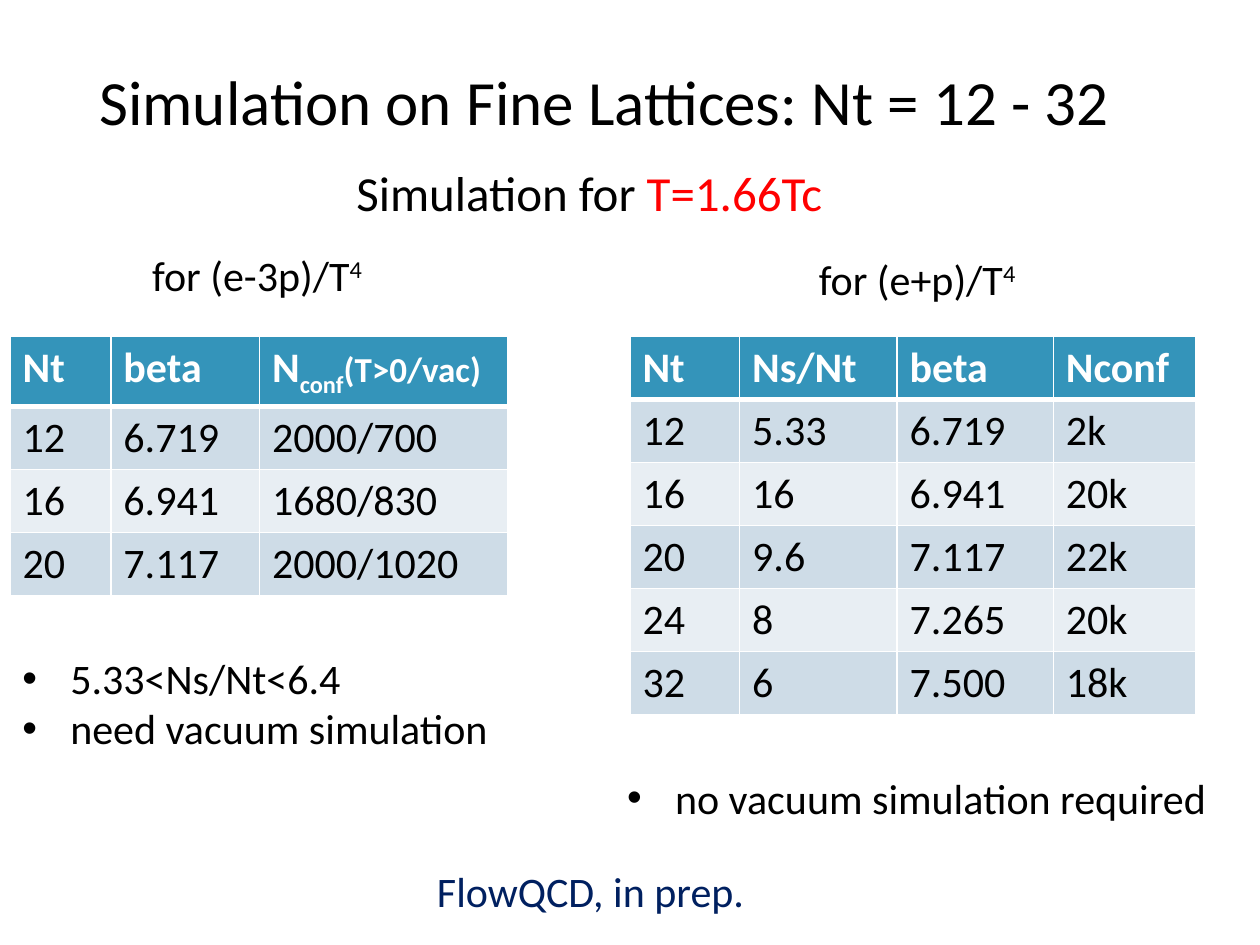
from dataclasses import dataclass

from lxml import etree
from pptx import Presentation, util as u
from pptx.dml.color import RGBColor
from pptx.enum import text
from pptx.oxml import ns

# Grid of 100 columns by 75 rows over a 10 x 7.5 inch slide
CELL = u.Inches(0.1)
COLUMNS, ROWS = 100, 75


@dataclass(frozen=True)
class Theme:
    font: str = "Calibri"
    ink: str = "000000"
    accent: str = "FF0000"
    credit: str = "002060"
    header: str = "3494BA"
    bands: tuple = ("CEDCE7", "E8EEF3")
    white: str = "FFFFFF"
    title: int = 36
    subtitle: int = 28
    body: int = 24
    small: int = 20


THEME = Theme()


def grid(*lengths):
    return [u.Emu(round(length * CELL)) for length in lengths]


def write(paragraph, parts, size=THEME.body, color=THEME.ink, bold=False):
    """Fill a paragraph with strings or (string, {size, color, base}) pairs."""
    for part in parts:
        words, style = (part, {}) if isinstance(part, str) else part
        run = paragraph.add_run()
        run.text = words
        run.font.name = THEME.font
        run.font.size = u.Pt(style.get("size", size))
        run.font.bold = bold
        run.font.color.rgb = RGBColor.from_string(style.get("color", color))
        if "base" in style:
            run.font._element.set("baseline", str(style["base"] * 1000))


def add_bullet(paragraph):
    indent = u.Inches(0.38)
    properties = paragraph._p.get_or_add_pPr()
    properties.set("marL", str(indent))
    properties.set("indent", str(-indent))
    etree.SubElement(properties, ns.qn("a:buFont"), typeface="Arial")
    etree.SubElement(properties, ns.qn("a:buChar"), char="•")


def add_label(slide, box, lines, bullets=False, **style):
    frame = slide.shapes.add_textbox(*grid(*box)).text_frame
    frame.word_wrap = False
    frame.auto_size = text.MSO_AUTO_SIZE.SHAPE_TO_FIT_TEXT
    for index, parts in enumerate(lines):
        paragraph = frame.add_paragraph() if index else frame.paragraphs[0]
        if bullets:
            add_bullet(paragraph)
        write(paragraph, parts, **style)


def add_title(slide, box, words):
    frame = slide.shapes.add_textbox(*grid(*box)).text_frame
    frame.word_wrap = True
    frame.vertical_anchor = text.MSO_ANCHOR.MIDDLE
    frame.paragraphs[0].line_spacing = 0.9
    write(frame.paragraphs[0], [words], size=THEME.title)


def set_borders(cell, bottom):
    """Borders come before the fill in the cell's properties."""
    properties = cell._tc.get_or_add_tcPr()
    widths = {"a:lnL": 1, "a:lnR": 1, "a:lnT": 1, "a:lnB": bottom}
    for position, (side, width) in enumerate(widths.items()):
        line = etree.Element(ns.qn(side), w=str(u.Pt(width)))
        fill = etree.SubElement(line, ns.qn("a:solidFill"))
        etree.SubElement(fill, ns.qn("a:srgbClr"), val=THEME.white)
        properties.insert(position, line)


def add_run_table(slide, left, top, widths, records):
    row_height = 4.1
    box = grid(left, top, sum(widths), row_height * len(records))
    table = slide.shapes.add_table(len(records), len(widths), *box).table
    for column, width in zip(table.columns, grid(*widths)):
        column.width = width
    for r, record in enumerate(records):
        table.rows[r].height = grid(row_height)[0]
        is_header = r == 0
        for c, value in enumerate(record):
            cell = table.cell(r, c)
            cell.fill.solid()
            cell.fill.fore_color.rgb = RGBColor.from_string(
                THEME.header if is_header else THEME.bands[(r - 1) % 2])
            # The line under the header is thicker, seen from both rows
            set_borders(cell, bottom=3 if is_header else 1)
            if r == 1:
                cell._tc.tcPr.find(ns.qn("a:lnT")).set("w", str(u.Pt(3)))
            write(cell.text_frame.paragraphs[0],
                  [value] if isinstance(value, str) else value,
                  color=THEME.white if is_header else THEME.ink,
                  bold=is_header)


def main():
    deck = Presentation()
    deck.slide_width, deck.slide_height = grid(COLUMNS, ROWS)
    slide = deck.slides.add_slide(deck.slide_layouts[6])
    fourth_power = ("4", {"base": 30})
    table_top = 26.7

    # Heading
    add_title(slide, (6.9, 1.1, 86.2, 14.5),
              "Simulation on Fine Lattices: Nt = 12 - 32")
    add_label(slide, (27.3, 12.4, 39.4, 5.7),
              [["Simulation for ", ("T=1.66Tc", {"color": THEME.accent})]],
              size=THEME.subtitle)

    # Left side: trace anomaly
    add_label(slide, (11.1, 19.3, 19, 5), [["for (e-3p)/T", fourth_power]])
    configurations = ["N", ("conf", {"base": -25}),
                      ("(T>0/vac)", {"size": THEME.small})]
    add_run_table(slide, 0.8, table_top, (8, 11.8, 19.7), [
        ("Nt", "beta", configurations),
        ("12", "6.719", "2000/700"),
        ("16", "6.941", "1680/830"),
        ("20", "7.117", "2000/1020"),
    ])
    add_label(slide, (0.8, 51.3, 39.3, 9.1),
              [["5.33<Ns/Nt<6.4"], ["need vacuum simulation"]], bullets=True)

    # Right side: entropy density
    add_label(slide, (64, 19.6, 17.9, 5), [["for (e+p)/T", fourth_power]])
    add_run_table(slide, 50, table_top, (8.7, 12.5, 12.4, 11.3), [
        ("Nt", "Ns/Nt", "beta", "Nconf"),
        ("12", "5.33", "6.719", "2k"),
        ("16", "16", "6.941", "20k"),
        ("20", "9.6", "7.117", "22k"),
        ("24", "8", "7.265", "20k"),
        ("32", "6", "7.500", "18k"),
    ])
    add_label(slide, (48.8, 60.8, 48.4, 5),
              [["no vacuum simulation required"]], bullets=True)

    # Credit
    add_label(slide, (33.7, 68.2, 26.6, 5), [["FlowQCD, in prep."]],
              color=THEME.credit)

    deck.save("out.pptx")


if __name__ == "__main__":
    main()
